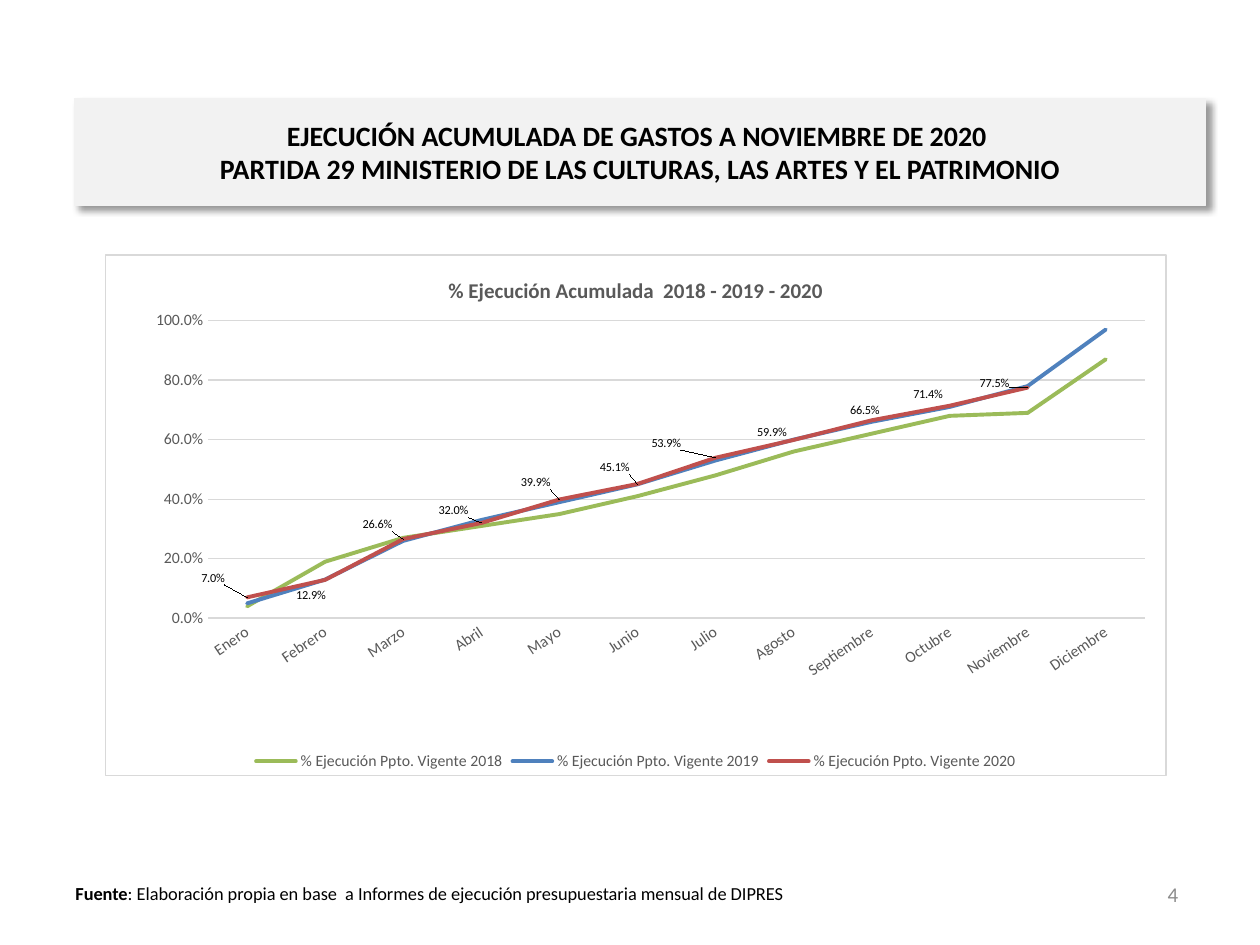
from lxml.etree import SubElement
from pptx import Presentation
from pptx.chart.data import CategoryChartData
from pptx.dml.color import RGBColor
from pptx.enum.chart import (XL_CHART_TYPE, XL_LABEL_POSITION,
                             XL_LEGEND_POSITION, XL_TICK_MARK)
from pptx.enum.text import MSO_ANCHOR, MSO_AUTO_SIZE, PP_ALIGN
from pptx.oxml import parse_xml
from pptx.oxml.ns import nsdecls, qn
from pptx.util import Inches, Pt

MONTHS = ["Enero", "Febrero", "Marzo", "Abril", "Mayo", "Junio", "Julio",
          "Agosto", "Septiembre", "Octubre", "Noviembre", "Diciembre"]
SERIES = [
    ("2018", "9BBB59", [0.04, 0.19, 0.27, 0.31, 0.35, 0.41,
                        0.48, 0.56, 0.62, 0.68, 0.69, 0.87]),
    ("2019", "4F81BD", [0.05, 0.13, 0.26, 0.33, 0.39, 0.45,
                        0.53, 0.6, 0.66, 0.71, 0.78, 0.97]),
    ("2020", "C0504D", [0.07, 0.129, 0.266, 0.32, 0.399, 0.451,
                        0.539, 0.599, 0.665, 0.714, 0.775, None]),
]
# Label shifts for 2020, in percent of the chart's width and height
SHIFTS = [(-4.8, -3.8), (-3.2, 2.9), (-4.3, -2.9), (-4.5, -2.5),
          (-4.1, -3.4), (-4, -3.3), (-6.5, -2.9), (-3.9, -1.5),
          (-2.5, -2.1), (-3.9, -2.3), (-5, -1)]
GREY, PALE = "595959", "D9D9D9"
FORM = "0.0%"


def color(code):
    return RGBColor.from_string(code)


def layout(target="", **parts):
    """Manual chart layout; parts are percent of the chart."""
    node = parse_xml(f"<c:layout {nsdecls('c')}><c:manualLayout/></c:layout>")
    tags = [("layoutTarget", target)] if target else []
    if target:
        tags += [("xMode", "edge"), ("yMode", "edge")]
    tags += [(key, f"{val / 100:.3f}") for key, val in parts.items()]
    for tag, val in tags:
        SubElement(node[0], qn(f"c:{tag}")).set("val", val)
    return node


class Deck:
    """Holds the style and the current slide; lengths are percent of it."""
    face = "Calibri"

    def __init__(self):
        self.prs = Presentation()
        self.prs.slide_width, self.prs.slide_height = Inches(10), Inches(7.5)
        self.slide = self.prs.slides.add_slide(self.prs.slide_layouts[5])

    def area(self, x, y, w, h):
        wide, high = self.prs.slide_width, self.prs.slide_height
        return [int(n * side / 100)
                for n, side in zip((x, y, w, h), (wide, high, wide, high))]

    def style(self, font, size, code="000000", bold=False):
        font.name, font.size, font.bold = self.face, Pt(size), bold
        font.color.rgb = color(code)

    def title(self, text, box):
        shape = self.slide.shapes.title
        shape.left, shape.top, shape.width, shape.height = self.area(*box)
        shape.fill.solid()
        shape.fill.fore_color.rgb = color("F2F2F2")
        shape.line.color.rgb = color("F2F2F2")
        shape.line.width = Pt(0.75)
        shape.shadow.inherit = False
        effects = shape._element.spPr.find(qn("a:effectLst"))
        effects.append(parse_xml(
            f'<a:outerShdw {nsdecls("a")} blurRad="{Pt(4)}" dist="{Pt(3)}" '
            'dir="2700000" algn="tl" rotWithShape="0"><a:srgbClr val="000000">'
            '<a:alpha val="40000"/></a:srgbClr></a:outerShdw>'))
        frame = shape.text_frame
        frame.text = text
        frame.auto_size = MSO_AUTO_SIZE.NONE
        frame.vertical_anchor = MSO_ANCHOR.MIDDLE
        para = frame.paragraphs[0]
        para.alignment = PP_ALIGN.CENTER
        for run in para.runs:
            self.style(run.font, 16, bold=True)

    def text(self, parts, box, size, code="000000", align=PP_ALIGN.LEFT):
        """Parts are (text, bold) pairs on one line."""
        frame = self.slide.shapes.add_textbox(*self.area(*box)).text_frame
        frame.word_wrap = align != PP_ALIGN.LEFT
        frame.vertical_anchor = MSO_ANCHOR.MIDDLE
        para = frame.paragraphs[0]
        para.alignment = align
        for words, bold in parts:
            run = para.add_run()
            run.text = words
            self.style(run.font, size, code, bold)

    def axis(self, axis):
        axis.major_tick_mark = axis.minor_tick_mark = XL_TICK_MARK.NONE
        self.style(axis.tick_labels.font, 9, GREY)

    def lines(self, name, box):
        data = CategoryChartData(number_format=FORM)
        data.categories = MONTHS
        for year, _, vals in SERIES:
            data.add_series(f"% Ejecución Ppto. Vigente {year}", vals)
        chart = self.slide.shapes.add_chart(
            XL_CHART_TYPE.LINE, *self.area(*box), data).chart
        self.style(chart.font, 10)

        chart.has_title = True
        chart.chart_title.text_frame.text = name
        run = chart.chart_title.text_frame.paragraphs[0].runs[0]
        self.style(run.font, 12, GREY, True)
        chart.chart_title.include_in_layout = False

        chart.has_legend = True
        chart.legend.position = XL_LEGEND_POSITION.BOTTOM
        chart.legend.include_in_layout = False
        self.style(chart.legend.font, 9, GREY)

        months, scale = chart.category_axis, chart.value_axis
        self.axis(months)
        months.format.line.color.rgb = color(PALE)
        months.format.line.width = Pt(1)
        months._element.txPr.bodyPr.set("rot", str(-34 * 60000))
        self.axis(scale)
        scale.format.line.fill.background()
        scale.minimum_scale, scale.maximum_scale = 0, 1
        scale.major_unit = 0.2
        scale.tick_labels.number_format = FORM
        scale.tick_labels.number_format_is_linked = False
        grid = scale.major_gridlines.format.line
        grid.color.rgb, grid.width = color(PALE), Pt(0.75)

        for series, (_, code, _) in zip(chart.plots[0].series, SERIES):
            series.smooth = False
            series.format.line.color.rgb = color(code)
            series.format.line.width = Pt(2.25)
            series.format.line._get_or_add_ln().set("cap", "rnd")
        self.labels(series)
        self.frame(chart)

    def labels(self, series):
        group = series.data_labels
        group.show_value = True
        group.number_format, group.number_format_is_linked = FORM, False
        self.style(group.font, 7)
        for spot, (x, y) in enumerate(SHIFTS):
            label = series.points[spot].data_label
            self.style(label.font, 7)
            label.position = XL_LABEL_POSITION.RIGHT
            node = group._element.findall(qn("c:dLbl"))[spot]
            node.insert(1, layout(x=x, y=y))

    def frame(self, chart):
        """Place the plot and give the chart its fill and border."""
        root = chart._chartSpace.find(qn("c:chart"))
        plot = root.find(qn("c:plotArea"))
        old = plot.find(qn("c:layout"))
        if old is not None:
            plot.remove(old)
        plot.insert(0, layout("inner", x=9.7, y=12.6, w=88.3, h=57.2))
        root.addnext(parse_xml(
            f'<c:spPr {nsdecls("c", "a")}><a:solidFill><a:srgbClr val="FFFFFF"/>'
            f'</a:solidFill><a:ln w="{Pt(0.75)}"><a:solidFill>'
            f'<a:srgbClr val="{PALE}"/></a:solidFill></a:ln></c:spPr>'))


def main():
    deck = Deck()
    deck.text([("Fuente", True),
               (": Elaboración propia en base  a Informes de ejecución "
                "presupuestaria mensual de DIPRES", False)],
              (5, 92.67, 59.1, 3.73), 10.5)
    deck.title("EJECUCIÓN ACUMULADA DE GASTOS A NOVIEMBRE DE 2020 \v"
               "PARTIDA 29 MINISTERIO DE LAS CULTURAS, LAS ARTES Y EL PATRIMONIO",
               (5.9, 10.4, 89.8, 11.33))
    deck.text([("4", False)], (71.2, 92, 23.3, 5.33), 12, "8C8C8C",
              PP_ALIGN.RIGHT)
    deck.lines("% Ejecución Acumulada  2018 - 2019 - 2020",
               (8.3, 26.93, 84.3, 55.2))
    deck.prs.save("out.pptx")


if __name__ == "__main__":
    main()
